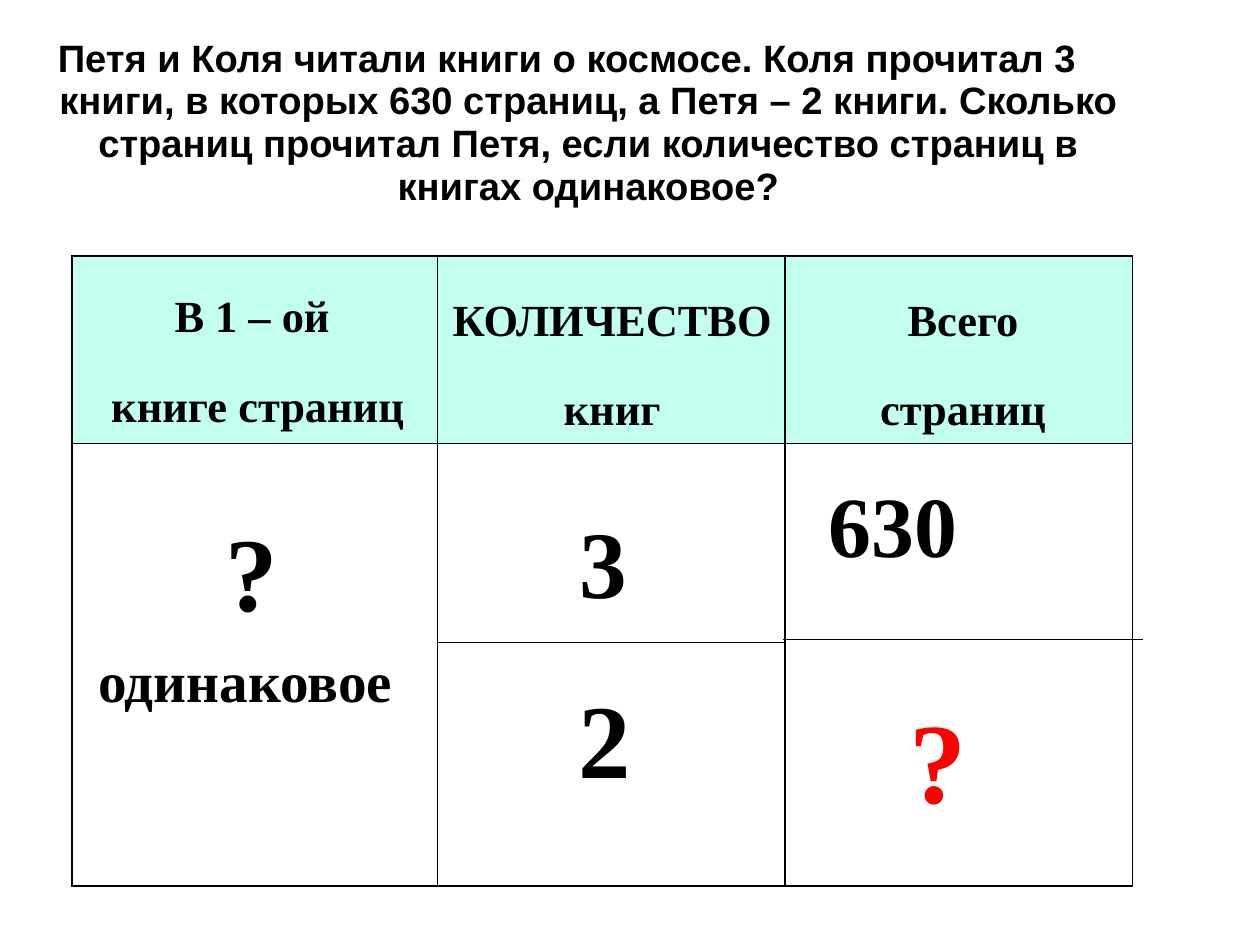
from lxml.etree import SubElement
from pptx import Presentation
from pptx.dml.color import RGBColor
from pptx.enum.shapes import MSO_CONNECTOR
from pptx.enum.text import MSO_ANCHOR, MSO_AUTO_SIZE, PP_ALIGN
from pptx.oxml.ns import qn
from pptx.util import Pt

# Content
PROBLEM = ("Петя и Коля читали книги о космосе. Коля прочитал 3 книги, "
           "в которых 630 страниц, а Петя – 2 книги. Сколько страниц прочитал "
           "Петя, если количество страниц в книгах одинаковое?")
COLORS = {"ink": "000000", "header": "C2FFF0", "paper": "FFFFFF", "unknown": "FF0000"}
CENTER, LEFT = PP_ALIGN.CENTER, PP_ALIGN.LEFT
SPACED = {"line_spacing": 1.5, "space_after": Pt(6)}
TIGHT = {"line_spacing": 0.93, "space_after": Pt(0)}

# Lines, (left, top, width, height), size, color, wrap, alignment, spacing
LABELS = [
    (["В 1 – ой", "книге страниц"], (39.6, 161.3, 238.3, 115.2), 28, "ink", True, CENTER, SPACED),
    (["КОЛИЧЕСТВО", "книг"], (277.6, 163.4, 216, 115.2), 28, "ink", True, CENTER, SPACED),
    (["Всего", "страниц"], (493.2, 163.4, 226.8, 115.2), 28, "ink", True, CENTER, SPACED),
    (["одинаковое"], (54.7, 381.3, 201.6, 64.8), 36, "ink", False, LEFT, SPACED),
    (["3"], (357.8, 277.5, 44.6, 103), 60, "ink", False, CENTER, SPACED),
    (["2"], (357.1, 381.6, 47.5, 113), 66, "ink", False, CENTER, SPACED),
    (["?"], (134.6, 276.2, 47.5, 113), 66, "ink", False, CENTER, SPACED),
    (["630"], (514.5, 299.2, 96.5, 68.4), 54, "ink", False, CENTER, TIGHT),
    (["?"], (565.6, 438.2, 51.1, 88.6), 72, "unknown", False, CENTER, TIGHT),
]
LINE_INDENTS = {"книге страниц": (7, 0), PROBLEM: (27, -27)}

# Slide and table geometry
SLIDE_WIDTH, SLIDE_HEIGHT = 793.7, 595.28
TABLE_LEFT, TABLE_TOP = 45.3, 161.3
COLUMN_WIDTHS = [230.4, 218.9, 218.9]
ROW_HEIGHTS = [118.1, 125.3, 153.4]
MERGED_COLUMNS = [0, 2]
DIVIDER = (493.2, 402.9, 720, 402.9)


def color(key):
    return RGBColor.from_string(COLORS[key])


def apply(target, values):
    for attribute, value in values.items():
        setattr(target, attribute, value)


def write(frame, lines, size, font, ink, paragraph_format):
    for index, line in enumerate(lines):
        paragraph = frame.paragraphs[0] if index == 0 else frame.add_paragraph()
        run = paragraph.add_run()
        run.text = line
        apply(paragraph, {"space_before": Pt(0), **paragraph_format})
        apply(run.font, {"size": Pt(size), "name": font, "bold": True})
        run.font.color.rgb = color(ink)
        if line in LINE_INDENTS:
            properties = paragraph._p.get_or_add_pPr()
            for name, indent in zip(("marL", "indent"), LINE_INDENTS[line]):
                properties.set(name, str(Pt(indent)))


def style_cell(cell, fill):
    properties = cell._tc.get_or_add_tcPr()
    for side in ("lnL", "lnR", "lnT", "lnB"):
        border = SubElement(properties, qn("a:" + side), w=str(Pt(1)))
        solid = SubElement(border, qn("a:solidFill"))
        SubElement(solid, qn("a:srgbClr"), val=COLORS["ink"])
    cell.fill.solid()
    cell.fill.fore_color.rgb = color(fill)


deck = Presentation()
apply(deck, {"slide_width": Pt(SLIDE_WIDTH), "slide_height": Pt(SLIDE_HEIGHT)})
slide = deck.slides.add_slide(deck.slide_layouts[5])

# Problem statement
problem = slide.shapes.title
apply(problem, {"left": Pt(0), "top": Pt(22.2), "width": Pt(714.2), "height": Pt(125)})
apply(problem.text_frame, {
    "margin_left": 0, "margin_right": 0, "margin_top": Pt(2), "margin_bottom": 0,
    "word_wrap": True, "vertical_anchor": MSO_ANCHOR.TOP, "auto_size": MSO_AUTO_SIZE.NONE})
write(problem.text_frame, [PROBLEM], 24, "Arial", "ink",
      {"alignment": CENTER, "line_spacing": 0.93, "space_after": Pt(14.2)})

# Table grid
grid = slide.shapes.add_table(
    len(ROW_HEIGHTS), len(COLUMN_WIDTHS), Pt(TABLE_LEFT), Pt(TABLE_TOP),
    Pt(sum(COLUMN_WIDTHS)), Pt(sum(ROW_HEIGHTS))).table
apply(grid, {"first_row": False, "horz_banding": False})
for column, width in zip(grid.columns, COLUMN_WIDTHS):
    column.width = Pt(width)
for number, (row, height) in enumerate(zip(grid.rows, ROW_HEIGHTS)):
    row.height = Pt(height)
    for cell in row.cells:
        style_cell(cell, "paper" if number else "header")
for number in MERGED_COLUMNS:
    grid.cell(1, number).merge(grid.cell(2, number))

# Divider in the last column
divider = slide.shapes.add_connector(MSO_CONNECTOR.STRAIGHT, *map(Pt, DIVIDER))
divider.line.color.rgb = color("ink")
divider.line.width = Pt(0.75)
SubElement(divider._element.spPr, qn("a:effectLst"))

# Headings and values
for lines, place, size, ink, wrap, alignment, spacing in LABELS:
    label = slide.shapes.add_textbox(*map(Pt, place)).text_frame
    apply(label, {"word_wrap": wrap, "auto_size": MSO_AUTO_SIZE.SHAPE_TO_FIT_TEXT})
    write(label, lines, size, "Times New Roman", ink, {"alignment": alignment, **spacing})

deck.save("out.pptx")
